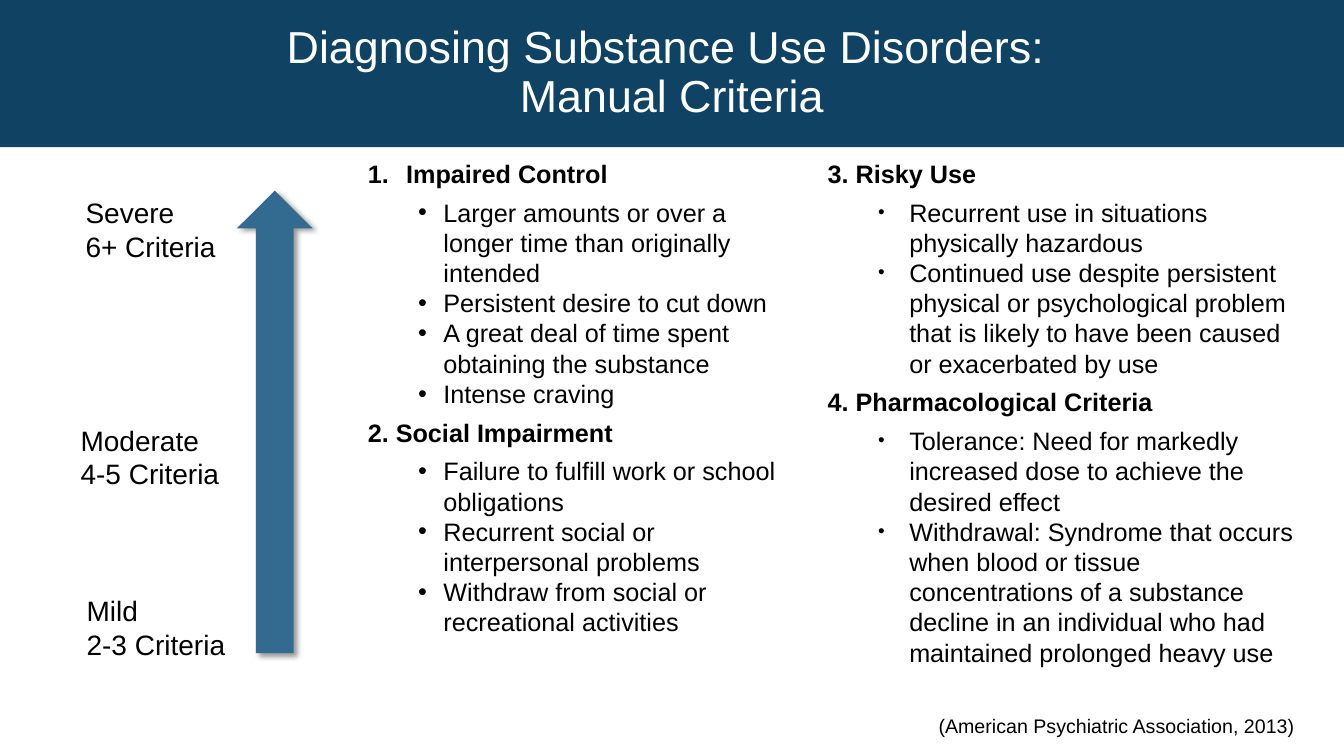
import pptx
import pptx.util
import pptx.dml.color
import pptx.enum.shapes
import pptx.enum.text
import lxml.etree

In, Pt = pptx.util.Inches, pptx.util.Pt
Kind = pptx.enum.shapes.MSO_SHAPE
Text = pptx.enum.text
NS = "http://schemas.openxmlformats.org/drawingml/2006/main"

deck = pptx.Presentation()
deck.slide_width, deck.slide_height = In(13.33), In(7.5)
slide = deck.slides.add_slide(deck.slide_layouts[6])
shapes = slide.shapes


def rgb(code):
    return pptx.dml.color.RGBColor.from_string(code)


def write(frame, lines, size, color="000000", **form):
    """Fill a text frame with (text, bold) lines and return its paragraphs."""
    for i, (text, bold) in enumerate(lines):
        para = frame.paragraphs[0] if i == 0 else frame.add_paragraph()
        for key, val in form.items():
            setattr(para, key, val)
        run = para.add_run()
        run.text = text
        run.font.color.rgb = rgb(color)
        for key, val in {"size": Pt(size), "name": "Arial", "bold": bold}.items():
            setattr(run.font, key, val)
    return frame.paragraphs


# Criteria columns: box, bullet indent, bullet size, lines (True marks a heading)
cols = [
    ((3.55, 1.52, 4.5, 5.29), (0.75, -0.25), 100, [
        ("Impaired Control", True),
        ("Larger amounts or over a longer time than originally intended", False),
        ("Persistent desire to cut down", False),
        ("A great deal of time spent obtaining the substance", False),
        ("Intense craving", False),
        ("2. Social Impairment", True),
        ("Failure to fulfill work or school obligations", False),
        ("Recurrent social or interpersonal problems", False),
        ("Withdraw from social or recreational activities", False)]),
    ((8.11, 1.52, 4.89, 5.98), (0.81, -0.31), 75, [
        ("3. Risky Use", True),
        ("Recurrent use in situations physically hazardous", False),
        ("Continued use despite persistent physical or psychological problem "
         "that is likely to have been caused or exacerbated by use", False),
        ("4. Pharmacological Criteria", True),
        ("Tolerance: Need for markedly increased dose to achieve the desired effect", False),
        ("Withdrawal: Syndrome that occurs when blood or tissue concentrations of a "
         "substance decline in an individual who had maintained prolonged heavy use", False)]),
]
for box, indent, scale, lines in cols:
    frame = shapes.add_textbox(*map(In, box)).text_frame
    frame.word_wrap = True
    for para, (text, head) in zip(write(frame, lines, 18), lines):
        if head:
            para.space_before = para.space_after = Pt(6)
            if text[0].isdigit():
                continue
            marks, (left, hang) = [("buAutoNum", "type", "arabicPeriod")], (0.38, -0.38)
        else:
            para.level = 1
            marks, (left, hang) = [("buSzPct", "val", str(scale * 1000)),
                                   ("buFont", "typeface", "Arial"),
                                   ("buChar", "char", "•")], indent
        props = para._p.get_or_add_pPr()
        props.set("marL", str(In(left)))
        props.set("indent", str(In(hang)))
        for tag, key, val in marks:
            lxml.etree.SubElement(props, f"{{{NS}}}{tag}").set(key, val)

# Severity arrow
arrow = shapes.add_shape(Kind.UP_ARROW, In(2.35), In(1.89), In(0.75), In(4.59))
arrow.fill.solid()
arrow.fill.fore_color.rgb = rgb("336B90")
arrow.line.fill.background()
arrow._element.spPr.append(lxml.etree.fromstring(
    f'<a:effectLst xmlns:a="{NS}"><a:outerShdw blurRad="{Pt(4)}" dist="{Pt(3)}" '
    'dir="2700000" algn="tl" rotWithShape="0"><a:srgbClr val="000000">'
    '<a:alpha val="40000"/></a:srgbClr></a:outerShdw></a:effectLst>'))

# Severity levels
levels = [("Mild", "2-3", 0.76, 5.84, 1.59),
          ("Moderate", "4-5", 0.7, 4.15, 1.59),
          ("Severe", "6+", 0.75, 1.89, 1.5)]
for name, count, left, top, wide in levels:
    frame = shapes.add_textbox(In(left), In(top), In(wide), In(0.77)).text_frame
    frame.word_wrap = False
    frame.auto_size = Text.MSO_AUTO_SIZE.SHAPE_TO_FIT_TEXT
    write(frame, [(name, False), (f"{count} Criteria", False)], 20)

# Title band
band = shapes.add_shape(Kind.RECTANGLE, 0, 0, deck.slide_width, In(1.46))
band.shadow.inherit = False
band.fill.solid()
band.fill.fore_color.rgb = rgb("0F4263")
band.line.fill.background()
band.text_frame.vertical_anchor = Text.MSO_ANCHOR.MIDDLE
write(band.text_frame,
      [("Diagnosing Substance Use Disorders: ", False), ("Manual Criteria", False)],
      32, "FFFFFF", alignment=Text.PP_ALIGN.CENTER, line_spacing=0.9)

# Citation
frame = shapes.add_textbox(In(9.21), In(7.03), In(3.92), In(0.34)).text_frame
frame.word_wrap = True
frame.auto_size = Text.MSO_AUTO_SIZE.SHAPE_TO_FIT_TEXT
write(frame, [("(American Psychiatric Association, 2013)", False)], 14)

deck.save("out.pptx")
